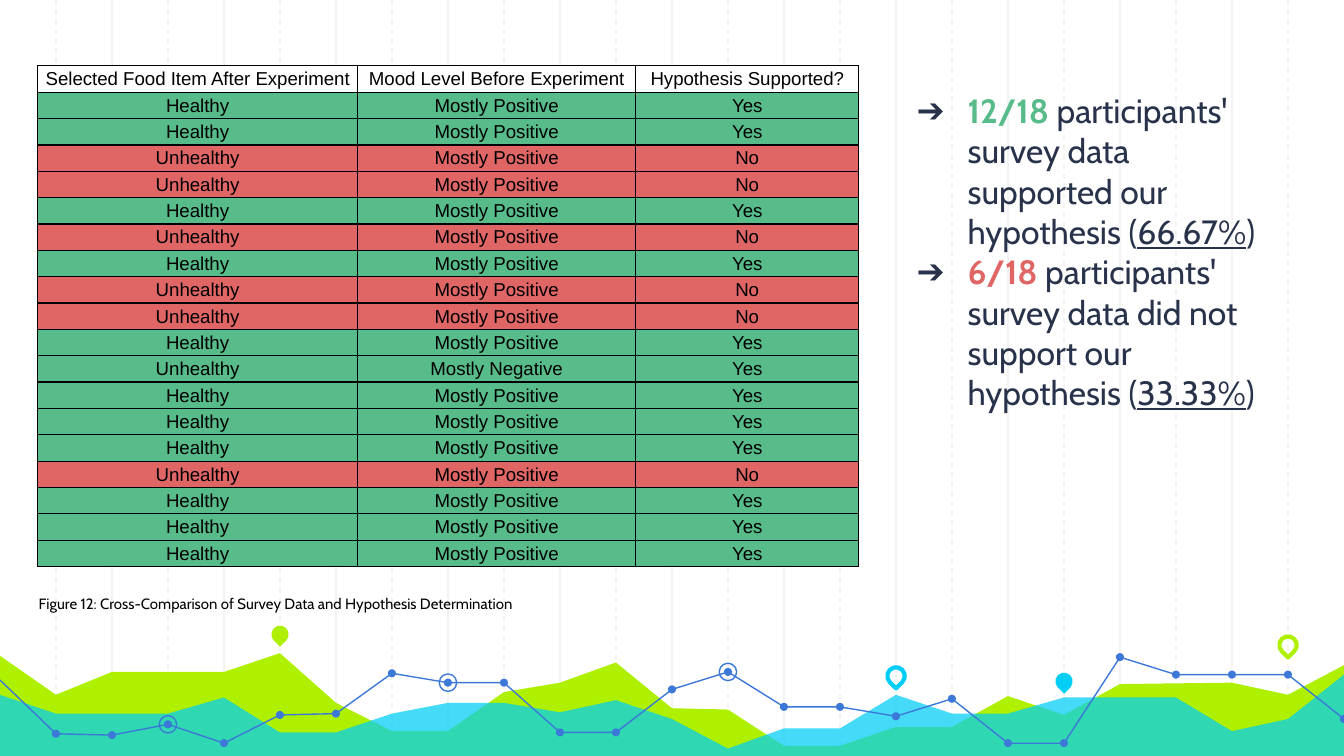
from lxml.etree import SubElement
from pptx import Presentation
from pptx.dml.color import RGBColor
from pptx.enum.dml import MSO_LINE
from pptx.enum.shapes import MSO_CONNECTOR, MSO_SHAPE
from pptx.enum.text import MSO_ANCHOR, MSO_AUTO_SIZE, PP_ALIGN
from pptx.oxml.ns import qn
from pptx.util import Inches, Pt

WIDTH = Inches(10)
HEIGHT = WIDTH * 9 // 16
COLUMNS = 24
LIME, CYAN, BLUE = "AFF000", "00CEF6", "3C78D8"
GREEN, RED, NAVY, BLACK = "57BB8A", "E06666", "28324A", "000000"

LIME_WAVE = [(0, 4.88), (1, 5.17), (2, 5), (4, 5), (5, 4.86), (6, 5.23), (7, 5.44), (8, 5.44),
             (9, 5.15), (10, 5.08), (11, 4.93), (12, 5.27), (13, 5.28), (14, 5.55), (15, 5.55),
             (16, 5.41), (17, 5.41), (18, 5.18), (19, 5.32), (20, 5.09), (22, 5.08), (23, 5.17),
             (24, 4.95)]
CYAN_WAVE = [(0, 5.17), (1, 5.31), (3, 5.31), (4, 5.19), (5, 5.45), (6, 5.45), (7, 5.31),
             (8, 5.23), (9, 5.23), (10, 5.3), (11, 5.21), (12, 5.35), (13, 5.57), (14, 5.42),
             (15, 5.42), (16, 5.17), (17, 5.31), (18, 5.31), (19, 5.19), (21, 5.19), (22, 5.44),
             (23, 5.35), (24, 5.02)]
TREND = list(enumerate([5.06, 5.46, 5.47, 5.39, 5.53, 5.32, 5.31, 5.01, 5.08, 5.08, 5.45, 5.45,
                        5.13, 5, 5.26, 5.26, 5.33, 5.2, 5.53, 5.53, 4.89, 5.02, 5.02, 5.02,
                        5.35]))
TREND_BREAKS = [0, 11, 20, 24]
RINGED = [8, 3, 13]
PINS = [(5, 4.72, LIME, True), (16, 5.03, CYAN, False),
        (19, 5.07, CYAN, True), (23, 4.8, LIME, False)]

HEADERS = ["Selected Food Item After Experiment", "Mood Level Before Experiment",
           "Hypothesis Supported?"]
COLUMN_WIDTHS = [2.38, 2.07, 1.66]
CHOICES = "HHUUHUHUUHUHHHUHHH"
NEGATIVE_MOODS = {10}
FINDINGS = [("12/18", GREEN, " participants' survey data supported our hypothesis (", "66.67%"),
            ("6/18", RED, " participants' survey data did not support our hypothesis (", "33.33%")]


def rgb(value):
    return RGBColor.from_string(value)


def column_x(column):
    return round(WIDTH * column / COLUMNS)


def paint(sp, fill=None, line=None, weight=0.75):
    sp.shadow.inherit = False
    if fill:
        sp.fill.solid()
        sp.fill.fore_color.rgb = rgb(fill)
    else:
        sp.fill.background()
    if line:
        sp.line.color.rgb = rgb(line)
        sp.line.width = Pt(weight)
    else:
        sp.line.fill.background()


def set_font(font, name, size, color):
    font.name = name
    font.size = Pt(size)
    font.color.rgb = rgb(color)


def add_grid_line(s, column):
    x = column_x(column)
    line = s.shapes.add_connector(MSO_CONNECTOR.STRAIGHT, x, 0, x, HEIGHT)
    line.line.color.rgb = rgb("F3F3F3")
    line.line.width = Pt(0.75)
    if column % 2:
        line.line.dash_style = MSO_LINE.DASH
    SubElement(line._element.spPr, qn("a:effectLst"))


def add_path(s, points, close):
    start, *rest = [(column_x(column), Inches(y)) for column, y in points]
    builder = s.shapes.build_freeform(*start)
    builder.add_line_segments(rest, close=close)
    return builder.convert_to_shape()


def add_wave(s, points, color, opacity=100):
    bottom = HEIGHT / Inches(1)
    sp = add_path(s, points + [(COLUMNS, bottom), (0, bottom)], True)
    paint(sp, color)
    if opacity < 100:
        clr = sp._element.spPr.find(qn("a:solidFill"))[0]
        SubElement(clr, qn("a:alpha"), val=str(opacity * 1000))


def add_marker(s, kind, column, y, size, **style):
    d = Inches(size)
    sp = s.shapes.add_shape(kind, column_x(column) - d // 2, Inches(y) - d // 2, d, d)
    paint(sp, **style)
    return sp


def add_pin(s, column, y, color, solid):
    style = {"fill": color} if solid else {"line": color, "weight": 2.25}
    add_marker(s, MSO_SHAPE.TEAR, column, y, 0.13, **style).rotation = 135


def add_trend(s):
    for first, last in zip(TREND_BREAKS, TREND_BREAKS[1:]):
        paint(add_path(s, TREND[first:last + 1], False), line=BLUE)
    for column, y in TREND[1:]:
        add_marker(s, MSO_SHAPE.OVAL, column, y, 0.06, fill=BLUE)
    for column in RINGED:
        add_marker(s, MSO_SHAPE.OVAL, *TREND[column], 0.13, line=BLUE)


def fill_cell(cell, text, color):
    tc_pr = cell._tc.get_or_add_tcPr()
    for side in ("lnL", "lnR", "lnT", "lnB"):
        ln = SubElement(tc_pr, qn(f"a:{side}"), w=str(Pt(0.75)))
        SubElement(SubElement(ln, qn("a:solidFill")), qn("a:srgbClr"), val=BLACK)
    cell.fill.solid()
    cell.fill.fore_color.rgb = rgb(color)
    cell.vertical_anchor = MSO_ANCHOR.BOTTOM
    cell.margin_left = cell.margin_right = Inches(0.03)
    cell.margin_top = cell.margin_bottom = Pt(1.25)
    p = cell.text_frame.paragraphs[0]
    p.text = text
    p.alignment = PP_ALIGN.CENTER
    set_font(p.font, "Arial", 10, BLACK)


def survey_rows():
    yield HEADERS, "FFFFFF"
    for i, choice in enumerate(CHOICES):
        healthy, positive = choice == "H", i not in NEGATIVE_MOODS
        supported = healthy == positive
        yield (["Healthy" if healthy else "Unhealthy",
                "Mostly Positive" if positive else "Mostly Negative",
                "Yes" if supported else "No"], GREEN if supported else RED)


def add_survey_table(s):
    rows = list(survey_rows())
    table = s.shapes.add_table(len(rows), len(HEADERS), Inches(0.28), Inches(0.49),
                               Inches(sum(COLUMN_WIDTHS)), Inches(3.73)).table
    for column, width in zip(table.columns, COLUMN_WIDTHS):
        column.width = Inches(width)
    for r, (texts, color) in enumerate(rows):
        for c, text in enumerate(texts):
            fill_cell(table.cell(r, c), text, color)


def set_arrow_bullet(p):
    p_pr = p._p.get_or_add_pPr()
    p_pr.set("marL", str(Inches(0.5)))
    p_pr.set("indent", str(-Inches(0.38)))
    SubElement(SubElement(p_pr, qn("a:buClr")), qn("a:srgbClr"), val=NAVY)
    SubElement(p_pr, qn("a:buFont"), typeface="Cabin")
    SubElement(p_pr, qn("a:buChar"), char="➔")


def set_margins(tf):
    tf.word_wrap = True
    tf.margin_left = tf.margin_right = tf.margin_top = tf.margin_bottom = Inches(0.1)


def fill_findings(s, sp):
    sp.left, sp.top, sp.width, sp.height = map(Inches, (6.6, 0.57, 2.87, 4.04))
    s.shapes._spTree.append(sp._element)
    tf = sp.text_frame
    set_margins(tf)
    tf.auto_size = MSO_AUTO_SIZE.NONE
    tf.vertical_anchor = MSO_ANCHOR.TOP
    for i, (count, color, statement, share) in enumerate(FINDINGS):
        p = tf.add_paragraph() if i else tf.paragraphs[0]
        set_arrow_bullet(p)
        p.space_before = Pt(0)
        for text in (count, statement, share, ")"):
            r = p.add_run()
            r.text = text
            set_font(r.font, "Cabin", 18, color if text == count else NAVY)
            r.font.bold = text == count
            r.font.underline = text == share


def add_caption(s, text):
    tf = s.shapes.add_textbox(*map(Inches, (0.19, 4.36, 6.33, 0.34))).text_frame
    set_margins(tf)
    p = tf.paragraphs[0]
    p.text = text
    set_font(p.font, "Cabin", 8, BLACK)


def main():
    prs = Presentation()
    prs.slide_width, prs.slide_height = WIDTH, HEIGHT
    s = prs.slides.add_slide(prs.slide_layouts[1])
    title, body = s.placeholders
    s.shapes._spTree.remove(title._element)
    for column in [*range(2, COLUMNS, 2), *range(1, COLUMNS, 2)]:
        add_grid_line(s, column)
    add_wave(s, LIME_WAVE, LIME)
    add_wave(s, CYAN_WAVE, CYAN, 73)
    add_trend(s)
    for pin in PINS:
        add_pin(s, *pin)
    add_survey_table(s)
    fill_findings(s, body)
    add_caption(s, "Figure 12: Cross-Comparison of Survey Data and Hypothesis Determination")
    prs.save("out.pptx")


if __name__ == "__main__":
    main()
